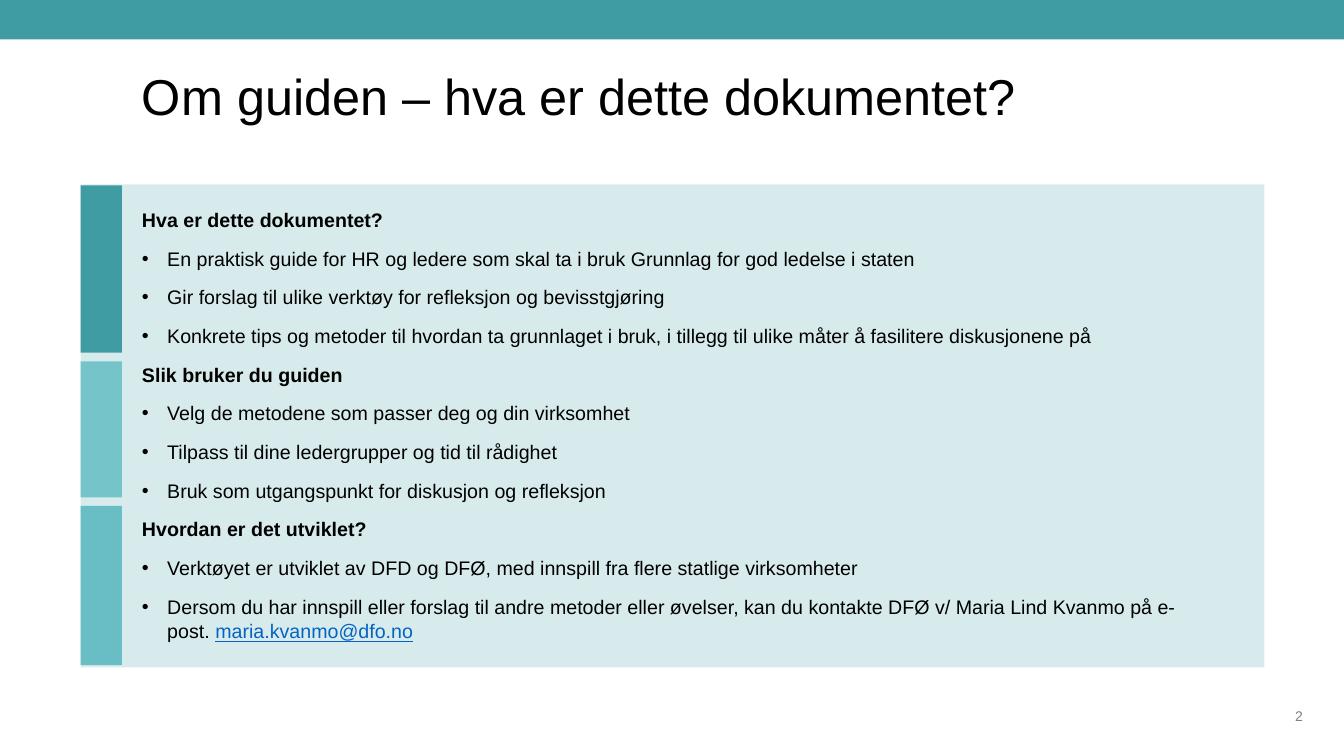
from dataclasses import dataclass

from lxml.etree import SubElement
from pptx import Presentation
from pptx.dml.color import RGBColor
from pptx.enum.shapes import MSO_SHAPE
from pptx.enum.text import MSO_ANCHOR, PP_ALIGN
from pptx.oxml.ns import qn
from pptx.util import Inches, Pt


@dataclass(frozen=True)
class Theme:
    font: str = "Arial"
    text: str = "000000"
    muted: str = "808080"
    link: str = "0563C1"
    teal: str = "3F9CA3"
    light_teal: str = "74C4CA"
    mid_teal: str = "69BEC5"
    title_pt: int = 36
    body_pt: int = 14
    number_pt: int = 10
    gap_pt: int = 10
    line_spacing: float = 1.05
    indent: float = 0.25


THEME = Theme()
WIDTH, HEIGHT = Inches(13.33), Inches(7.5)

# Left edges, widths, tops and heights are percentages of the slide.
PANEL = (6, 24.4, 88.07, 63.87)
TITLE = (9.83, 4.27, 80.33, 16.67)
BODY = (9.83, 26.67, 80.33, 59.73)
NUMBER = (94.82, 92.13, 3.68, 5.2)
TOP_BAND = (0, 0, 100, 5.2)
BAR_TOP, BAR_WIDTH, BAR_GAP = 24.53, 3.08, 1.13
BARS = [(22.13, THEME.teal), (18, THEME.light_teal), (21.07, THEME.mid_teal)]

EMAIL = "maria.kvanmo@dfo.no"
SECTIONS = [
    ("Hva er dette dokumentet?", [
        "En praktisk guide for HR og ledere som skal ta i bruk Grunnlag for god ledelse i staten",
        "Gir forslag til ulike verktøy for refleksjon og bevisstgjøring",
        "Konkrete tips og metoder til hvordan ta grunnlaget i bruk, i tillegg til ulike måter å "
        "fasilitere diskusjonene på",
    ]),
    ("Slik bruker du guiden", [
        "Velg de metodene som passer deg og din virksomhet",
        "Tilpass til dine ledergrupper og tid til rådighet",
        "Bruk som utgangspunkt for diskusjon og refleksjon",
    ]),
    ("Hvordan er det utviklet?", [
        "Verktøyet er utviklet av DFD og DFØ, med innspill fra flere statlige virksomheter",
        "Dersom du har innspill eller forslag til andre metoder eller øvelser, kan du kontakte "
        "DFØ v/ Maria Lind Kvanmo på e-post. ",
    ]),
]


def place(box):
    """Turn percentages of the slide into left, top, width and height."""
    left, top, width, height = box
    return (round(WIDTH * left / 100), round(HEIGHT * top / 100),
            round(WIDTH * width / 100), round(HEIGHT * height / 100))


def add_block(slide, box, color, opacity=100):
    sp = slide.shapes.add_shape(MSO_SHAPE.RECTANGLE, *place(box))
    sp.shadow.inherit = False
    sp.fill.solid()
    sp.fill.fore_color.rgb = RGBColor.from_string(color)
    sp.line.fill.background()
    if opacity < 100:
        rgb = sp.fill._xPr.find(".//" + qn("a:srgbClr"))
        SubElement(rgb, qn("a:alpha"), val=str(opacity * 1000))


def style(r, size, color=THEME.text, bold=False, underline=False):
    r.font.name = THEME.font
    r.font.size = Pt(size)
    r.font.color.rgb = RGBColor.from_string(color)
    r.font.bold = bold
    if underline:
        r.font.underline = True


def add_frame(slide, box, anchor=MSO_ANCHOR.TOP):
    tf = slide.shapes.add_textbox(*place(box)).text_frame
    tf.word_wrap = True
    tf.vertical_anchor = anchor
    return tf


def add_line(slide, box, text, size, color=THEME.text, align=PP_ALIGN.LEFT):
    """Add a single vertically centred line of text."""
    tf = add_frame(slide, box, MSO_ANCHOR.MIDDLE)
    tf.text = text
    p = tf.paragraphs[0]
    p.alignment = align
    style(p.runs[0], size, color)


def add_bullet(p):
    pPr = p._p.get_or_add_pPr()
    indent = Inches(THEME.indent)
    pPr.set("marL", str(indent))
    pPr.set("indent", str(-indent))
    SubElement(pPr, qn("a:buFont"), typeface=THEME.font)
    SubElement(pPr, qn("a:buChar"), char="•")


def add_paragraph(tf, text, heading=False):
    first = not tf.text
    p = tf.paragraphs[0] if first else tf.add_paragraph()
    p.text = text
    if not heading:
        add_bullet(p)
    p.line_spacing = THEME.line_spacing
    p.space_before = Pt(0 if first else THEME.gap_pt)
    style(p.runs[0], THEME.body_pt, bold=heading)
    return p


def add_sections(slide):
    tf = add_frame(slide, BODY)
    for heading, points in SECTIONS:
        add_paragraph(tf, heading, heading=True)
        for point in points:
            p = add_paragraph(tf, point)
    r = p.add_run()
    r.text = EMAIL
    style(r, THEME.body_pt, THEME.link, underline=True)


def add_bars(slide):
    top = BAR_TOP
    for height, color in BARS:
        add_block(slide, (PANEL[0], top, BAR_WIDTH, height), color)
        top += height + BAR_GAP


def main():
    prs = Presentation()
    prs.slide_width, prs.slide_height = WIDTH, HEIGHT
    slide = prs.slides.add_slide(prs.slide_layouts[6])
    add_block(slide, PANEL, THEME.teal, opacity=20)
    add_line(slide, TITLE, "Om guiden – hva er dette dokumentet?", THEME.title_pt)
    add_sections(slide)
    add_line(slide, NUMBER, "2", THEME.number_pt, THEME.muted, PP_ALIGN.CENTER)
    add_bars(slide)
    add_block(slide, TOP_BAND, THEME.teal)
    prs.save("out.pptx")


if __name__ == "__main__":
    main()
